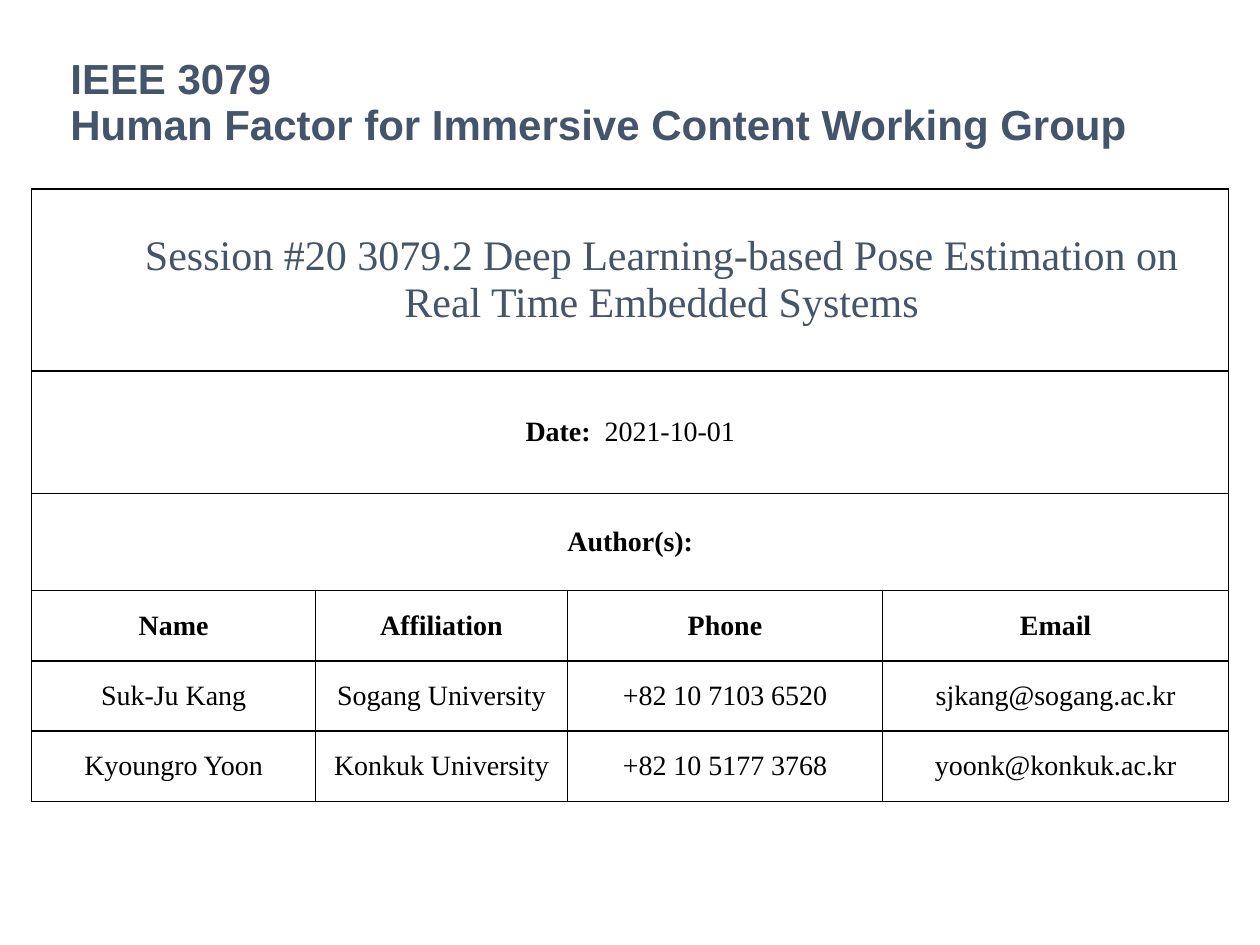
"""Build the title slide of a working group session with its author table."""
from dataclasses import dataclass

from lxml import etree
from pptx import Presentation
from pptx.dml.color import RGBColor
from pptx.enum.text import MSO_ANCHOR, PP_ALIGN
from pptx.oxml.ns import qn
from pptx.util import Cm, Pt

MIDDLE = MSO_ANCHOR.MIDDLE
CENTER = PP_ALIGN.CENTER


@dataclass(frozen=True)
class Theme:
    slate: RGBColor = RGBColor(0x44, 0x54, 0x6A)
    black: RGBColor = RGBColor(0, 0, 0)
    heading: str = "Arial"
    body: str = "Times New Roman"
    large: int = Pt(24)
    small: int = Pt(16)


THEME = Theme()


def add_run(p, text, name, size, color, bold):
    r = p.add_run()
    r.text = text
    for key, value in {"name": name, "size": size, "bold": bold}.items():
        setattr(r.font, key, value)
    r.font.color.rgb = color


def set_borders(cell):
    tcPr = cell._tc.get_or_add_tcPr()
    for i, side in enumerate(("lnL", "lnR", "lnT", "lnB")):
        ln = etree.Element(qn(f"a:{side}"), w=str(Pt(1)))
        fill = etree.SubElement(ln, qn("a:solidFill"))
        etree.SubElement(fill, qn("a:srgbClr"), val=str(THEME.black))
        tcPr.insert(i, ln)


prs = Presentation()
prs.slide_width, prs.slide_height = Cm(25.4), Cm(19.05)
s = prs.slides.add_slide(prs.slide_layouts[6])

tf = s.shapes.add_textbox(Cm(1.17), Cm(0.66), Cm(23.06), Cm(2.87)).text_frame
tf.word_wrap = True
tf.vertical_anchor = MIDDLE
p = tf.paragraphs[0]
p.line_spacing = 0.9
heading = (THEME.heading, THEME.large, THEME.slate, True)
add_run(p, "IEEE 3079", *heading)
p.add_line_break()
add_run(p, "Human Factor for Immersive Content Working Group", *heading)

session = (THEME.body, THEME.large, THEME.slate, False)
label = (THEME.body, THEME.small, THEME.black, True)
plain = (THEME.body, THEME.small, THEME.black, False)
rows = [
    [[("Session #20 3079.2 Deep Learning-based Pose Estimation on "
       "Real Time Embedded Systems", session)]],
    [[("Date: ", label), (" 2021-10-01", plain)]],
    [[("Author(s):", label)]],
]
rows += [[[(text, style)] for text in texts] for style, texts in (
    (label, ("Name", "Affiliation", "Phone", "Email")),
    (plain, ("Suk-Ju Kang", "Sogang University", "+82 10 7103 6520", "sjkang@sogang.ac.kr")),
    (plain, ("Kyoungro Yoon", "Konkuk University", "+82 10 5177 3768", "yoonk@konkuk.ac.kr")),
)]
widths = (5.72, 5.08, 6.35, 6.98)
heights = (3.67, 2.47, 1.95, 1.42, 1.42, 1.42)
cell_format = {
    "margin_left": Cm(0.18), "margin_right": Cm(0.18),
    "margin_top": 0, "margin_bottom": 0, "vertical_anchor": MIDDLE,
}

table = s.shapes.add_table(len(rows), len(widths), Cm(0.64), Cm(3.81),
                           Cm(sum(widths)), Cm(sum(heights))).table
table.first_row = table.horz_banding = False
for column, width in zip(table.columns, widths):
    column.width = Cm(width)
for i, (row, height) in enumerate(zip(rows, heights)):
    table.rows[i].height = Cm(height)
    for cell in table.rows[i].cells:
        for key, value in cell_format.items():
            setattr(cell, key, value)
        cell.fill.background()
        set_borders(cell)
    if len(row) == 1:
        table.cell(i, 0).merge(table.cell(i, len(widths) - 1))
    for j, runs in enumerate(row):
        p = table.cell(i, j).text_frame.paragraphs[0]
        p.alignment = CENTER
        for text, style in runs:
            add_run(p, text, *style)

for i in range(2):
    table.cell(i, 0).text_frame.paragraphs[0].space_after = Pt(12)
pPr = table.cell(0, 0).text_frame.paragraphs[0]._p.get_or_add_pPr()
pPr.set("marL", str(Cm(1.27)))

prs.save("out.pptx")
